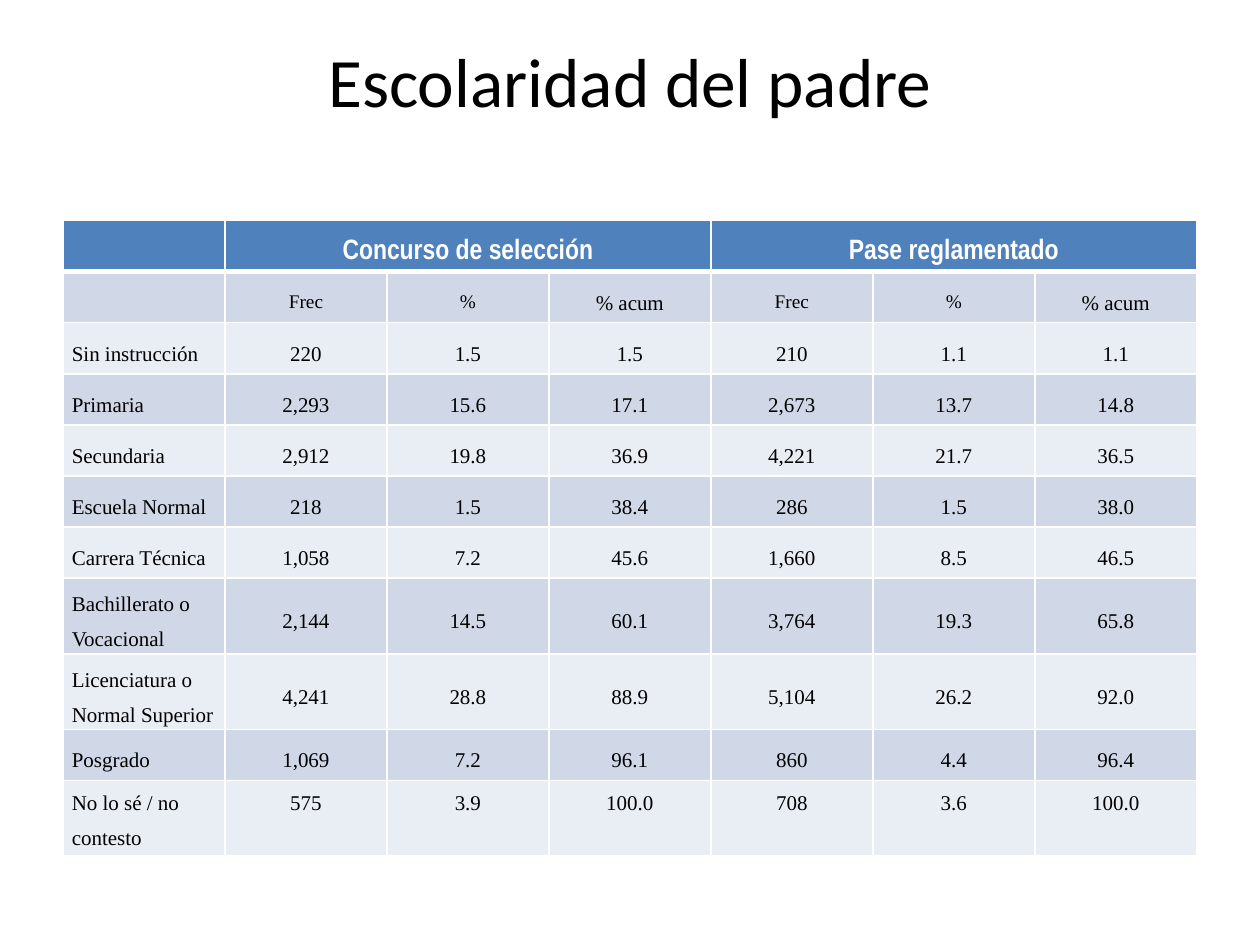
from pptx import Presentation
from pptx.dml.color import RGBColor
from pptx.enum.text import MSO_ANCHOR, PP_ALIGN
from pptx.oxml.ns import qn
from pptx.util import Inches, Pt
from lxml.etree import SubElement

TITLE = "Escolaridad del padre"
GROUPS = ["Concurso de selección", "Pase reglamentado"]
HEADS = ["Frec", "%", "% acum"]
ROWS = [
    ("Sin instrucción", "220", "1.5", "1.5", "210", "1.1", "1.1"),
    ("Primaria", "2,293", "15.6", "17.1", "2,673", "13.7", "14.8"),
    ("Secundaria", "2,912", "19.8", "36.9", "4,221", "21.7", "36.5"),
    ("Escuela Normal", "218", "1.5", "38.4", "286", "1.5", "38.0"),
    ("Carrera Técnica", "1,058", "7.2", "45.6", "1,660", "8.5", "46.5"),
    ("Bachillerato o Vocacional", "2,144", "14.5", "60.1", "3,764", "19.3", "65.8"),
    ("Licenciatura o Normal Superior", "4,241", "28.8", "88.9", "5,104", "26.2", "92.0"),
    ("Posgrado", "1,069", "7.2", "96.1", "860", "4.4", "96.4"),
    ("No lo sé / no contesto", "575", "3.9", "100.0", "708", "3.6", "100.0"),
]
COLORS = {"head": "4F81BD", "dark": "D0D8E8", "light": "E9EDF4",
          "line": "FFFFFF", "white": "FFFFFF", "black": "000000"}
SPAN = len(HEADS)
GRID = [["", GROUPS[0], "", "", GROUPS[1], "", ""], ["", *HEADS, *HEADS], *ROWS]


def color(name):
    return RGBColor.from_string(COLORS[name])


def style(para, face, size, tint, bold=False, align=PP_ALIGN.CENTER):
    para.alignment = align
    font = para.font
    font.name, font.size, font.bold = face, Pt(size), bold
    font.color.rgb = color(tint)


def border(cell, row):
    """Rule every side, with a heavy line under the top row."""
    props = cell._tc.get_or_add_tcPr()
    heavy = {(0, "B"), (1, "T")}
    for side in "LRTB":
        width = Pt(3 if (row, side) in heavy else 1)
        line = SubElement(props, qn(f"a:ln{side}"), w=str(width))
        fill = SubElement(line, qn("a:solidFill"))
        SubElement(fill, qn("a:srgbClr"), val=COLORS["line"])


def paint(cell, text, row, col):
    border(cell, row)
    cell.fill.solid()
    band = "head" if row == 0 else "dark" if row % 2 else "light"
    cell.fill.fore_color.rgb = color(band)
    cell.margin_left = cell.margin_right = Inches(0.07)
    cell.margin_top = cell.margin_bottom = 0
    last = row == len(GRID) - 1
    cell.vertical_anchor = MSO_ANCHOR.TOP if last else MSO_ANCHOR.MIDDLE
    if not text:
        return
    cell.text = text
    para = cell.text_frame.paragraphs[0]
    para.line_spacing = 1.5
    if row == 0:
        style(para, "Arial Narrow", 16, "white", bold=True)
    else:
        size = 11 if text in HEADS[:2] else 12
        align = PP_ALIGN.CENTER if col else PP_ALIGN.LEFT
        style(para, "Times New Roman", size, "black", align=align)


def main():
    deck = Presentation()
    deck.slide_width, deck.slide_height = Inches(10), Inches(7.5)
    slide = deck.slides.add_slide(deck.slide_layouts[6])
    left, width = deck.slide_width // 20, deck.slide_width * 9 // 10

    box = slide.shapes.add_textbox(left, Inches(0.3), width, Inches(1.25))
    frame = box.text_frame
    frame.word_wrap = True
    frame.margin_top = 0
    frame.text = TITLE
    style(frame.paragraphs[0], "Calibri", 39.6, "black")

    high = Pt(29.2)
    table = slide.shapes.add_table(len(GRID), len(GRID[0]), left, Inches(1.75),
                                   width, high * len(GRID)).table
    for row, texts in enumerate(GRID):
        table.rows[row].height = high
        for col, text in enumerate(texts):
            paint(table.cell(row, col), text, row, col)
    for group in range(len(GROUPS)):
        start = 1 + group * SPAN
        table.cell(0, start).merge(table.cell(0, start + SPAN - 1))

    deck.save("out.pptx")


if __name__ == "__main__":
    main()
